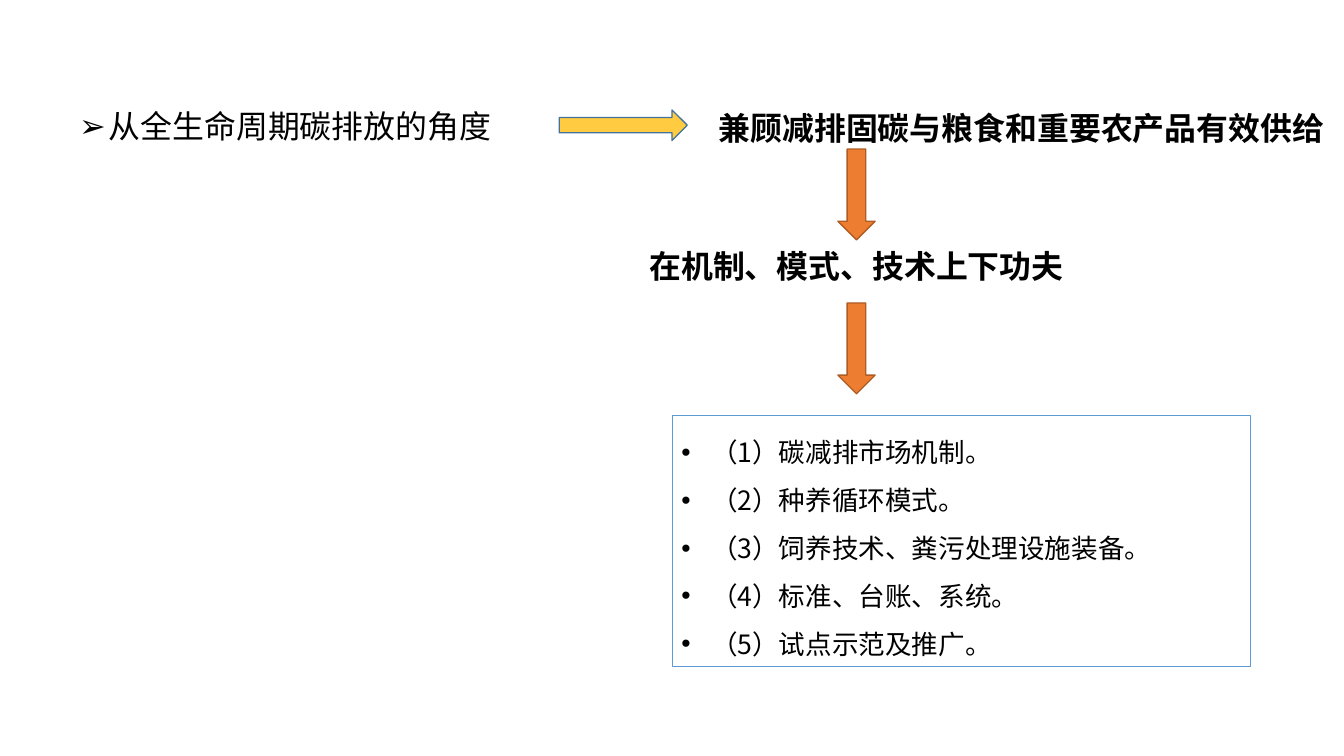
from lxml.etree import SubElement
from pptx import Presentation
from pptx.dml.color import RGBColor
from pptx.enum.shapes import MSO_SHAPE as Shape
from pptx.enum.text import MSO_ANCHOR as Anchor, PP_ALIGN as Align
from pptx.oxml.ns import qn
from pptx.util import Inches, Pt

FONT = "Noto Sans CJK SC"
COLORS = {"text": "000000", "frame": "5B9BD5", "yellow": "FFCC41",
          "yellow_line": "43739E", "orange": "ED7D31", "orange_line": "AF5C24"}

HEADING = {"size": Pt(24), "bold": True}
PLAIN = {"size": Pt(24), "bold": False}
ITEM = {"size": Pt(20), "bold": False}

PERSPECTIVE = "从全生命周期碳排放的角度"
GOAL = "兼顾减排固碳与粮食和重要农产品有效供给"
EFFORT = "在机制、模式、技术上下功夫"
MEASURES = ["碳减排市场机制。", "种养循环模式。", "饲养技术、粪污处理设施装备。",
            "标准、台账、系统。", "试点示范及推广。"]

AXIS = 8.96
DOWN_WIDTH, DOWN_HEIGHT = 0.39, 0.95
DOWN_TOPS = [1.56, 3.17]
EFFORT_WIDTH = 5.66
TEXT_HEIGHT = 0.5


def color(name):
    """Return the named colour."""
    return RGBColor.from_string(COLORS[name])


def add_bullet(paragraph, bullet):
    """Give a paragraph a hanging bullet."""
    properties = paragraph._p.get_or_add_pPr()
    properties.set("marL", str(Inches(0.31)))
    properties.set("indent", str(-Inches(0.31)))
    SubElement(properties, qn("a:buFont")).set("typeface", "Arial")
    SubElement(properties, qn("a:buChar")).set("char", bullet)


def write(shape, lines, font_format, spacing, bullet=None, align=Align.LEFT):
    """Fill a shape with one formatted paragraph per line."""
    frame = shape.text_frame
    frame.word_wrap = True
    frame.vertical_anchor = Anchor.TOP
    for index, line in enumerate(lines):
        paragraph = frame.add_paragraph() if index else frame.paragraphs[0]
        paragraph.alignment = align
        paragraph.line_spacing = Pt(spacing)
        if bullet:
            add_bullet(paragraph, bullet)
        run = paragraph.add_run()
        run.text = line
        for name, value in {"name": FONT, **font_format}.items():
            setattr(run.font, name, value)
        run.font.color.rgb = color("text")
        SubElement(run._r.get_or_add_rPr(), qn("a:ea")).set("typeface", FONT)


def add_text(slide, box, line, font_format, **options):
    """Add a single-line text box."""
    shape = slide.shapes.add_textbox(*map(Inches, box))
    write(shape, [line], font_format, 31, **options)


def add_block(slide, kind, box, line, width, fill=None):
    """Add a preset shape with its outline and optional fill."""
    shape = slide.shapes.add_shape(kind, *map(Inches, box))
    shape.shadow.inherit = False
    if fill:
        shape.fill.solid()
        shape.fill.fore_color.rgb = color(fill)
    else:
        shape.fill.background()
    shape.line.color.rgb = color(line)
    shape.line.width = Pt(width)
    return shape


def main():
    """Build the slide and save it."""
    presentation = Presentation()
    presentation.slide_width = Inches(14.06)
    presentation.slide_height = Inches(7.91)
    slide = presentation.slides.add_slide(presentation.slide_layouts[6])

    add_text(slide, (0.73, 1.04, 4.61, TEXT_HEIGHT), PERSPECTIVE, PLAIN, bullet="➢")
    measures = add_block(slide, Shape.RECTANGLE, (7.03, 4.35, 6.05, 2.62), "frame", 0.75)
    numbered = [f"（{number}）{text}" for number, text in enumerate(MEASURES, 1)]
    write(measures, numbered, ITEM, 36, bullet="•")

    add_block(slide, Shape.RIGHT_ARROW, (5.85, 1.15, 1.34, 0.32), "yellow_line", 1, "yellow")
    add_text(slide, (7.42, 1.06, 6.66, TEXT_HEIGHT), GOAL, HEADING)
    add_text(slide, (AXIS - EFFORT_WIDTH / 2, 2.5, EFFORT_WIDTH, TEXT_HEIGHT),
             EFFORT, HEADING, align=Align.CENTER)
    for top in DOWN_TOPS:
        box = (AXIS - DOWN_WIDTH / 2, top, DOWN_WIDTH, DOWN_HEIGHT)
        add_block(slide, Shape.DOWN_ARROW, box, "orange_line", 1, "orange")

    presentation.save("out.pptx")


if __name__ == "__main__":
    main()
